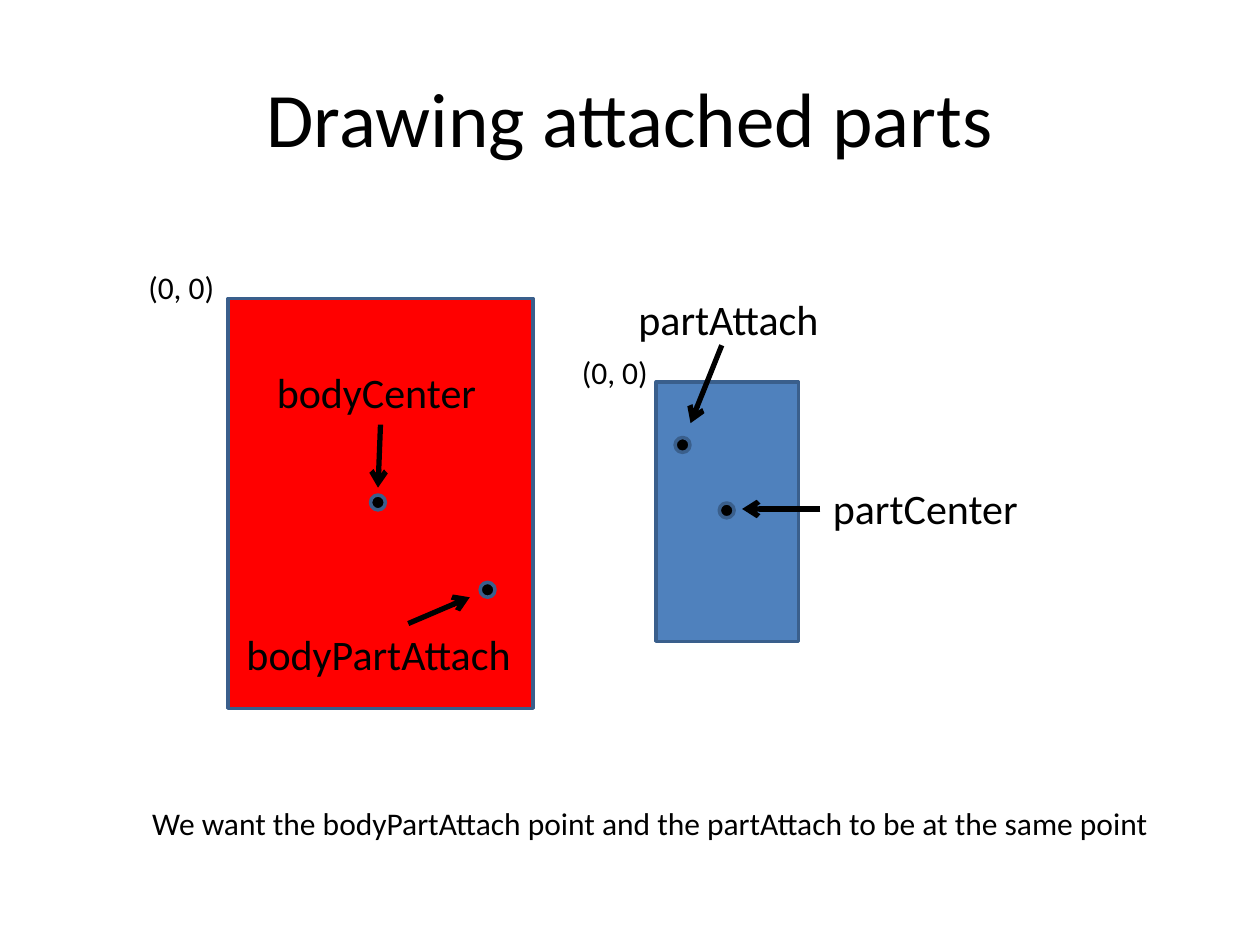
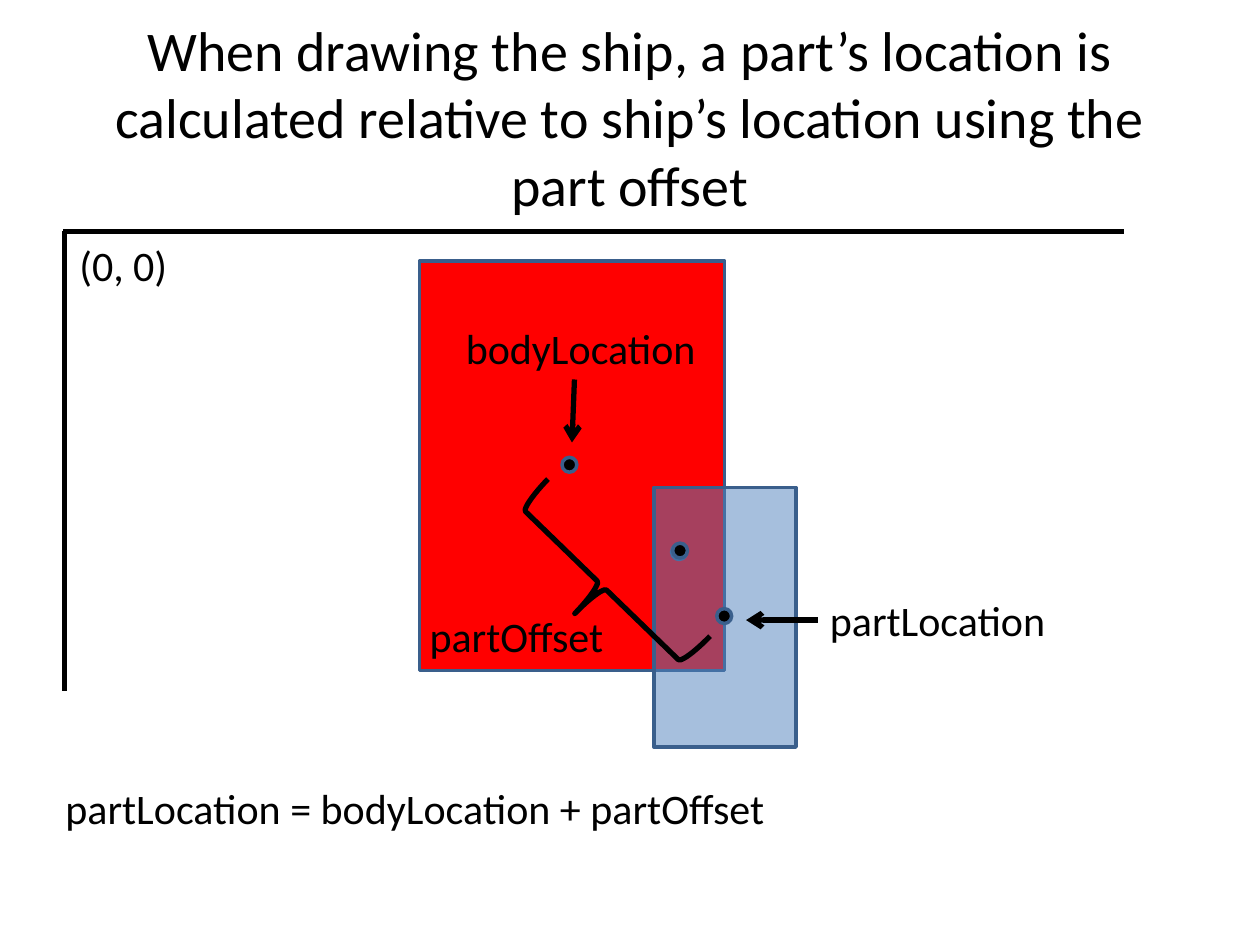
from dataclasses import dataclass

import pptx
import pptx.dml.color
import pptx.enum.shapes
import pptx.enum.text
import pptx.oxml
import pptx.oxml.ns
import pptx.util
from pptx.util import Cm

FONT = "Calibri"
BLACK, RED, BLUE, EDGE = "000000", "FF0000", "4F81BD", "3A5F8C"
DOT = 0.3
SHAPE = pptx.enum.shapes.MSO_SHAPE


@dataclass(frozen=True)
class Block:
    """A rectangle; its dots are offsets from its top left corner."""
    wide: float
    high: float
    fill: str
    dots: tuple


@dataclass(frozen=True)
class Label:
    text: str
    left: float
    top: float
    wide: float
    size: int = 24


@dataclass(frozen=True)
class Line:
    x1: float
    y1: float
    x2: float
    y2: float
    arrow: bool = True


BODY = Block(6.15, 8.26, RED, ((2.87, 3.96), (5.08, 5.72)))
PART = Block(2.87, 5.23, BLUE, ((1.27, 2.44), (0.38, 1.12)))


def color(code: str):
    return pptx.dml.color.RGBColor.from_string(code)


def add_run(para, text: str, size: int) -> None:
    run = para.add_run()
    run.text = text
    run.font.name = FONT
    run.font.size = pptx.util.Pt(size)
    run.font.color.rgb = color(BLACK)


def add_child(parent, tag: str, **attrs: str) -> None:
    node = pptx.oxml.parse_xml(f"<a:{tag} {pptx.oxml.ns.nsdecls('a')}/>")
    for name, value in attrs.items():
        node.set(name, value)
    parent.append(node)


def set_line(line, code: str, width: float) -> None:
    line.color.rgb = color(code)
    line.width = pptx.util.Pt(width)


def add_slide(deck, title: str, size: int):
    slide = deck.slides.add_slide(deck.slide_layouts[5])
    head = slide.shapes.title
    head.left, head.top = Cm(1.27), Cm(0.76)
    head.width, head.height = Cm(22.86), Cm(3.18)
    frame = head.text_frame
    frame.auto_size = pptx.enum.text.MSO_AUTO_SIZE.NONE
    frame.vertical_anchor = pptx.enum.text.MSO_ANCHOR.MIDDLE
    para = frame.paragraphs[0]
    para.alignment = pptx.enum.text.PP_ALIGN.CENTER
    add_run(para, title, size)
    return slide


def add_form(slide, kind, left: float, top: float, wide: float, high: float, fill: str):
    form = slide.shapes.add_shape(kind, Cm(left), Cm(top), Cm(wide), Cm(high))
    form.shadow.inherit = False
    form.fill.solid()
    form.fill.fore_color.rgb = color(fill)
    set_line(form.line, EDGE, 2)
    return form


def add_block(slide, block: Block, left: float, top: float, alpha: int = 100) -> None:
    """Draw a block and its dots; alpha is the opacity in percent."""
    form = add_form(slide, SHAPE.RECTANGLE, left, top, block.wide, block.high, block.fill)
    if alpha < 100:
        tint = form._element.spPr.find(pptx.oxml.ns.qn("a:solidFill"))[0]
        add_child(tint, "alpha", val=str(alpha * 1000))
    for x, y in block.dots:
        add_form(slide, SHAPE.OVAL, left + x, top + y, DOT, DOT, BLACK)


def add_brace(slide) -> None:
    brace = add_form(slide, SHAPE.LEFT_BRACE, 11.35, 9.53, 1.57, 4.55, BLACK)
    brace.fill.background()
    set_line(brace.line, BLACK, 3)
    brace.rotation = 314.1


def add_label(slide, label: Label) -> None:
    high = 1.27 if label.size == 24 else 1.02
    box = slide.shapes.add_textbox(Cm(label.left), Cm(label.top), Cm(label.wide), Cm(high))
    frame = box.text_frame
    frame.word_wrap = False
    frame.auto_size = pptx.enum.text.MSO_AUTO_SIZE.SHAPE_TO_FIT_TEXT
    add_run(frame.paragraphs[0], label.text, label.size)


def add_line(slide, line: Line) -> None:
    link = slide.shapes.add_connector(
        pptx.enum.shapes.MSO_CONNECTOR.STRAIGHT,
        Cm(line.x1), Cm(line.y1), Cm(line.x2), Cm(line.y2))
    set_line(link.line, BLACK, 3)
    if line.arrow:
        add_child(link.line._get_or_add_ln(), "tailEnd", type="arrow")
    add_child(link._element.spPr, "effectLst")


def add_notes(slide, labels: tuple, lines: tuple) -> None:
    """Draw the labels and lines that explain the blocks."""
    for label in labels:
        add_label(slide, label)
    for line in lines:
        add_line(slide, line)


def draw_parts(deck) -> None:
    slide = add_slide(deck, "Drawing attached parts", 44)
    add_block(slide, BODY, 4.6, 6.02)
    add_block(slide, PART, 13.23, 7.7)
    labels = (
        Label("bodyCenter", 5.33, 7.26, 4.57),
        Label("bodyPartAttach", 4.72, 12.55, 5.89),
        Label("partCenter", 16.54, 9.6, 4.29),
        Label("partAttach", 12.62, 5.79, 4.19),
        Label("(0, 0)", 2.74, 5.28, 1.85, 18),
        Label("(0, 0)", 11.48, 6.99, 1.85, 18),
        Label("We want the bodyPartAttach point and the partAttach "
              "to be at the same point", 2.82, 16.08, 20.7, 18),
    )
    lines = (
        Line(7.67, 8.56, 7.62, 9.83),
        Line(8.23, 12.57, 9.47, 12.04),
        Line(14.55, 6.96, 13.92, 8.53),
        Line(16.54, 10.26, 14.96, 10.26),
    )
    add_notes(slide, labels, lines)


def draw_ship(deck) -> None:
    slide = add_slide(
        deck, "When drawing the ship, a part’s location is calculated "
        "relative to ship’s location using the part offset", 32)
    add_block(slide, BODY, 8.46, 5.26)
    add_block(slide, PART, 13.18, 9.83, alpha=50)
    add_brace(slide)
    labels = (
        Label("partLocation = bodyLocation + partOffset", 1.07, 15.65, 14.96),
        Label("partOffset", 8.41, 12.19, 4.06),
        Label("bodyLocation", 9.14, 6.38, 5.21),
        Label("partLocation", 16.48, 11.86, 4.9),
        Label("(0, 0)", 1.35, 4.7, 2.29),
    )
    lines = (
        Line(11.58, 7.65, 11.53, 8.92),
        Line(16.48, 12.5, 15.04, 12.5),
        Line(1.27, 4.67, 22.66, 4.67, arrow=False),
        Line(1.3, 4.65, 1.3, 13.92, arrow=False),
    )
    add_notes(slide, labels, lines)


def main() -> None:
    deck = pptx.Presentation()
    deck.slide_width, deck.slide_height = Cm(25.4), Cm(19.05)
    draw_parts(deck)
    draw_ship(deck)
    deck.save("out.pptx")


if __name__ == "__main__":
    main()
